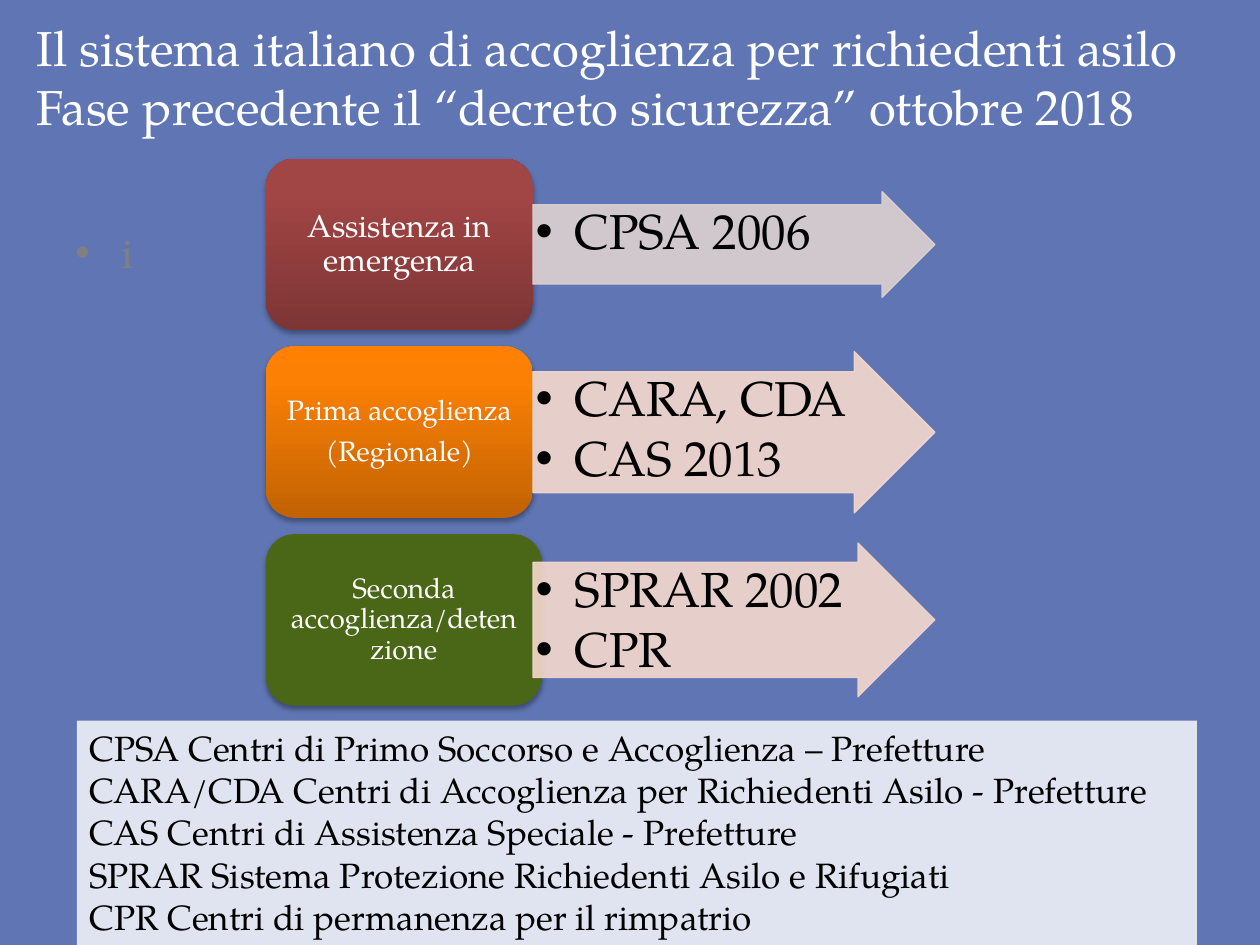
from copy import deepcopy

from lxml import etree
from pptx import Presentation
from pptx.dml.color import RGBColor
from pptx.enum.shapes import MSO_SHAPE
from pptx.enum.text import MSO_ANCHOR, MSO_AUTO_SIZE, PP_ALIGN
from pptx.oxml.ns import qn
from pptx.util import Inches, Pt

ARROW, ROUNDED, RECTANGLE = MSO_SHAPE.RIGHT_ARROW, MSO_SHAPE.ROUNDED_RECTANGLE, MSO_SHAPE.RECTANGLE
TOP, MIDDLE = MSO_ANCHOR.TOP, MSO_ANCHOR.MIDDLE
LEFT, CENTER = PP_ALIGN.LEFT, PP_ALIGN.CENTER
FONT = "TeX Gyre Pagella"

BLUE = RGBColor(0x60, 0x76, 0xB4)
PALE_BLUE = RGBColor(0xDF, 0xE4, 0xF0)
WHITE = RGBColor(0xFF, 0xFF, 0xFF)
BLACK = RGBColor(0, 0, 0)
GREY = RGBColor(0x80, 0x80, 0x80)
GREEN = RGBColor(0x4A, 0x67, 0x17)
REDS = [RGBColor(0x7D, 0x35, 0x35), RGBColor(0xA2, 0x45, 0x45), RGBColor(0xA4, 0x43, 0x43)]
ORANGES = [RGBColor(0xC2, 0x62, 0x03), RGBColor(0xFB, 0x80, 0x04), RGBColor(0xFF, 0x80, 0x02)]
MAUVE = RGBColor(0xDE, 0xD1, 0xD1)
PEACH = RGBColor(0xF5, 0xD9, 0xCD)
DARK_PEACH = RGBColor(0xF1, 0xD4, 0xC8)

TITLE = ["Il sistema italiano di accoglienza per richiedenti asilo",
         "Fase precedente il “decreto sicurezza” ottobre 2018"]
PHASES = [
    dict(label=["Assistenza in emergenza"], size=18, colors=REDS, width=2.12, inset=0.07,
         centers=["CPSA 2006"], arrow=MAUVE, edge=MAUVE, arrow_height=0.84),
    dict(label=["Prima accoglienza", "(Regionale)"], size=16, colors=ORANGES, width=2.12, inset=0.07,
         centers=["CARA, CDA", "CAS 2013"], arrow=PEACH, edge=PEACH, arrow_height=1.28),
    dict(label=["Seconda accoglienza/detenzione"], size=16, colors=[GREEN], width=2.19, inset=0.12,
         centers=["SPRAR 2002", "CPR"], arrow=PEACH, edge=DARK_PEACH, arrow_height=1.22),
]
LEGEND = ["CPSA Centri di Primo Soccorso e Accoglienza – Prefetture",
          "CARA/CDA Centri di Accoglienza per Richiedenti Asilo - Prefetture",
          "CAS Centri di Assistenza Speciale - Prefetture",
          "SPRAR Sistema Protezione Richiedenti Asilo e Rifugiati",
          "CPR Centri di permanenza per il rimpatrio"]

BOX_LEFT, BOX_TOP, BOX_HEIGHT, ROW_PITCH = 2.11, 1.26, 1.36, 1.49
ARROW_LEFT, ARROW_WIDTH = 4.23, 3.19


def write(shape, lines, size, color, align=LEFT, anchor=TOP, insets=(0.1, 0.05),
          line_spacing=1.0, space_after=0):
    frame = shape.text_frame
    frame.word_wrap = True
    frame.auto_size = MSO_AUTO_SIZE.NONE
    frame.vertical_anchor = anchor
    frame.margin_left = frame.margin_right = Inches(insets[0])
    frame.margin_top = frame.margin_bottom = Inches(insets[1])
    frame.text = "\n".join(lines)
    for paragraph in frame.paragraphs:
        paragraph.alignment = align
        paragraph.line_spacing = line_spacing
        paragraph.space_before = Pt(0)
        paragraph.space_after = Pt(space_after)
        for run in paragraph.runs:
            run.font.name = FONT
            run.font.size = Pt(size)
            run.font.color.rgb = color


def add_bullets(shape, indent):
    for paragraph in shape.text_frame.paragraphs:
        properties = paragraph._p.get_or_add_pPr()
        properties.set("marL", str(Inches(indent)))
        properties.set("indent", str(-Inches(indent)))
        etree.SubElement(properties, qn("a:buFont"), typeface="Arial")
        etree.SubElement(properties, qn("a:buChar"), char="•")


def add_block(slide, kind, left, top, width, height, color):
    shape = slide.shapes.add_shape(kind, Inches(left), Inches(top), Inches(width), Inches(height))
    shape.shadow.inherit = False
    shape.fill.solid()
    shape.fill.fore_color.rgb = color
    shape.line.fill.background()
    return shape


def shade_upward(shape, colors):
    """Three-stop gradient whose first colour lies at the bottom."""
    shape.fill.gradient()
    shape.fill.gradient_angle = 90
    stop_list = shape._element.spPr.find(qn("a:gradFill")).find(qn("a:gsLst"))
    stop_list.append(deepcopy(stop_list[-1]))
    for stop, position, color in zip(shape.fill.gradient_stops, (0, 0.8, 1), colors):
        stop.position = position
        stop.color.rgb = color


def drop_shadow(shape):
    effects = shape._element.spPr.find(qn("a:effectLst"))
    shadow = etree.SubElement(effects, qn("a:outerShdw"), blurRad=str(Pt(3.1)),
                              dist=str(Pt(1.8)), dir="5400000", rotWithShape="0")
    color = etree.SubElement(shadow, qn("a:srgbClr"), val="000000")
    etree.SubElement(color, qn("a:alpha"), val="35000")


def make_translucent(shape, percent):
    for color in shape._element.spPr.iter(qn("a:srgbClr")):
        etree.SubElement(color, qn("a:alpha"), val=str(percent * 1000))


def add_phase(slide, row, phase):
    top = BOX_TOP + row * ROW_PITCH
    box = add_block(slide, ROUNDED, BOX_LEFT, top, phase["width"], BOX_HEIGHT, phase["colors"][0])
    if len(phase["colors"]) > 1:
        shade_upward(box, phase["colors"])
    drop_shadow(box)
    write(box, phase["label"], phase["size"], WHITE, CENTER, MIDDLE, (phase["inset"], 0.04), 0.9, 6)

    height = phase["arrow_height"]
    arrow = add_block(slide, ARROW, ARROW_LEFT, top + (BOX_HEIGHT - height) / 2,
                      ARROW_WIDTH, height, phase["arrow"])
    arrow.adjustments[0] = 0.75
    arrow.line.color.rgb = phase["edge"]
    arrow.line.width = Pt(0.75)
    make_translucent(arrow, 90)
    write(arrow, phase["centers"], 28, BLACK, insets=(0.02, 0.02), line_spacing=0.9, space_after=4)
    add_bullets(arrow, 0.31)


def main():
    presentation = Presentation()
    presentation.slide_width, presentation.slide_height = Inches(10), Inches(7.5)
    slide = presentation.slides.add_slide(presentation.slide_layouts[5])
    slide.background.fill.solid()
    slide.background.fill.fore_color.rgb = BLUE

    title = slide.shapes.title
    title.left, title.top = Inches(0.19), Inches(0.09)
    title.width, title.height = Inches(9.74), Inches(1.04)
    write(title, TITLE, 28, WHITE)

    note = slide.shapes.add_textbox(Inches(0.5), Inches(1.75), Inches(1.2), Inches(0.5))
    write(note, ["i"], 24, GREY)
    add_bullets(note, 0.37)

    legend = add_block(slide, RECTANGLE, 0.61, 5.72, 8.89, 1.78, PALE_BLUE)
    write(legend, LEGEND, 20, BLACK)

    for row, phase in enumerate(PHASES):
        add_phase(slide, row, phase)

    presentation.save("out.pptx")


if __name__ == "__main__":
    main()
